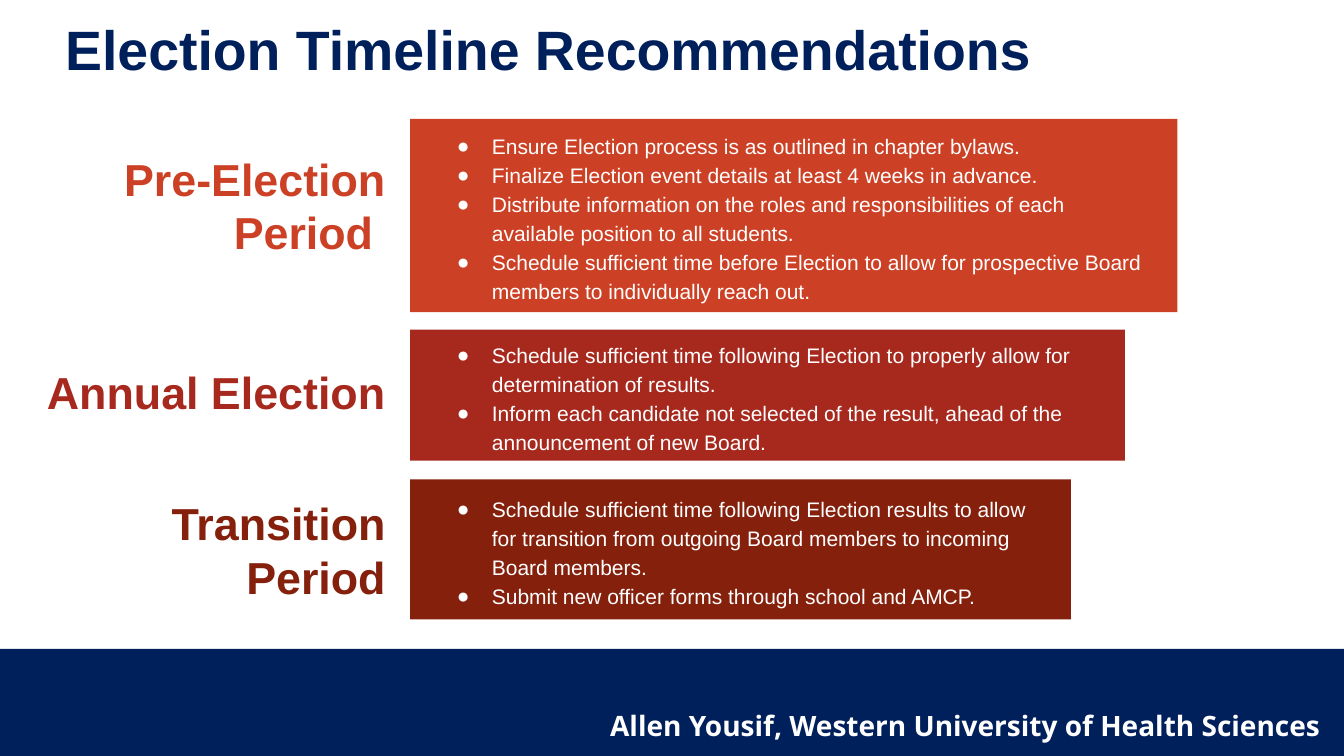
"""Builds the election timeline recommendations slide."""
from lxml import etree
from pptx import Presentation
from pptx import util as u
from pptx.dml.color import RGBColor
from pptx.enum import shapes, text
from pptx.oxml.ns import qn

NAVY = RGBColor(0x00, 0x20, 0x5B)
WHITE = RGBColor(0xFF, 0xFF, 0xFF)
ORANGE = RGBColor(0xCC, 0x41, 0x25)
RED = RGBColor(0xA7, 0x29, 0x1E)
BROWN = RGBColor(0x85, 0x20, 0x0C)

TITLE = "Election Timeline Recommendations"
PRESENTER = "Allen Yousif, Western University of Health Sciences"
PERIODS = [
    dict(name="Pre-Election Period ", color=ORANGE, top=85, height=138,
         width=548, label_left=75, label_mid=146.5, spacing=1.0, points=[
             "Ensure Election process is as outlined in chapter bylaws.",
             "Finalize Election event details at least 4 weeks in advance.",
             "Distribute information on the roles and responsibilities of each "
             "available position to all students.",
             "Schedule sufficient time before Election to allow for prospective "
             "Board members to individually reach out."]),
    dict(name="Annual Election", color=RED, top=235.5, height=93.5,
         width=510.5, label_left=0, label_mid=282, spacing=0.9, points=[
             "Schedule sufficient time following Election to properly allow for "
             "determination of results.",
             "Inform each candidate not selected of the result, ahead of the "
             "announcement of new Board."]),
    dict(name="Transition Period", color=BROWN, top=342.5, height=100,
         width=472, label_left=78.5, label_mid=392.5, spacing=1.0, points=[
             "Schedule sufficient time following Election results to allow for "
             "transition from outgoing Board members to incoming Board members.",
             "Submit new officer forms through school and AMCP."]),
]
SLIDE_W, SLIDE_H = 960, 540
FOOTER_TOP = 463.5
BAR_LEFT, LABEL_RIGHT, LABEL_H = 293, 285, 86
MIDDLE = text.MSO_ANCHOR.MIDDLE
RIGHT = text.PP_ALIGN.RIGHT


def set_frame(sp, insets, anchor):
    tf = sp.text_frame
    tf.word_wrap = True
    tf.vertical_anchor = anchor
    (tf.margin_left, tf.margin_top,
     tf.margin_right, tf.margin_bottom) = [u.Pt(v) for v in insets]
    return tf


def add_run(p, words, size, color, bold=False, font="Arial"):
    r = p.add_run()
    r.text = words
    r.font.name, r.font.size, r.font.bold = font, u.Pt(size), bold
    r.font.color.rgb = color


def add_line(s, box, words, size, color, insets=(7.2, 3.6, 7.2, 3.6),
             anchor=MIDDLE, align=text.PP_ALIGN.LEFT, spacing=1.0, font="Arial"):
    sp = s.shapes.add_textbox(*[u.Pt(v) for v in box])
    p = set_frame(sp, insets, anchor).paragraphs[0]
    p.alignment, p.line_spacing = align, spacing
    add_run(p, words, size, color, True, font)


def add_block(s, box, color):
    sp = s.shapes.add_shape(shapes.MSO_SHAPE.RECTANGLE, *[u.Pt(v) for v in box])
    sp.shadow.inherit = False
    sp.fill.solid()
    sp.fill.fore_color.rgb = color
    sp.line.fill.background()
    return sp


def add_bullet(p, left, hanging):
    pr = p._p.get_or_add_pPr()
    pr.set("marL", str(u.Pt(left)))
    pr.set("indent", str(-u.Pt(hanging)))
    tint = etree.SubElement(pr, qn("a:buClr"))
    etree.SubElement(tint, qn("a:srgbClr"), val=str(WHITE))
    etree.SubElement(pr, qn("a:buFont"), typeface="Arial")
    etree.SubElement(pr, qn("a:buChar"), char="●")


def add_period(s, period):
    label = (period["label_left"], period["label_mid"] - LABEL_H / 2,
             LABEL_RIGHT - period["label_left"], LABEL_H)
    add_line(s, label, period["name"], 32, period["color"],
             (9.4, 4.8, 9.4, 4.8), align=RIGHT, spacing=period["spacing"])
    bar = add_block(s, (BAR_LEFT, period["top"], period["width"],
                        period["height"]), period["color"])
    tf = set_frame(bar, (22.4, 7, 22, 5), MIDDLE)
    for i, point in enumerate(period["points"]):
        p = tf.add_paragraph() if i else tf.paragraphs[0]
        add_bullet(p, 36, 25)
        p.alignment, p.line_spacing = text.PP_ALIGN.LEFT, 1.15
        add_run(p, point, 15, WHITE)


def main():
    prs = Presentation()
    prs.slide_width, prs.slide_height = u.Pt(SLIDE_W), u.Pt(SLIDE_H)
    s = prs.slides.add_slide(prs.slide_layouts[6])
    add_block(s, (0, FOOTER_TOP, SLIDE_W, SLIDE_H - FOOTER_TOP), NAVY)
    add_line(s, (39.5, 13, 828, 49), TITLE, 39.6, NAVY, spacing=0.9)
    add_line(s, (175.5, 502.5, 775, 31.5), PRESENTER, 20, WHITE,
             anchor=text.MSO_ANCHOR.TOP, align=RIGHT, font="Open Sans")
    for period in PERIODS:
        add_period(s, period)
    prs.save("out.pptx")


if __name__ == "__main__":
    main()
